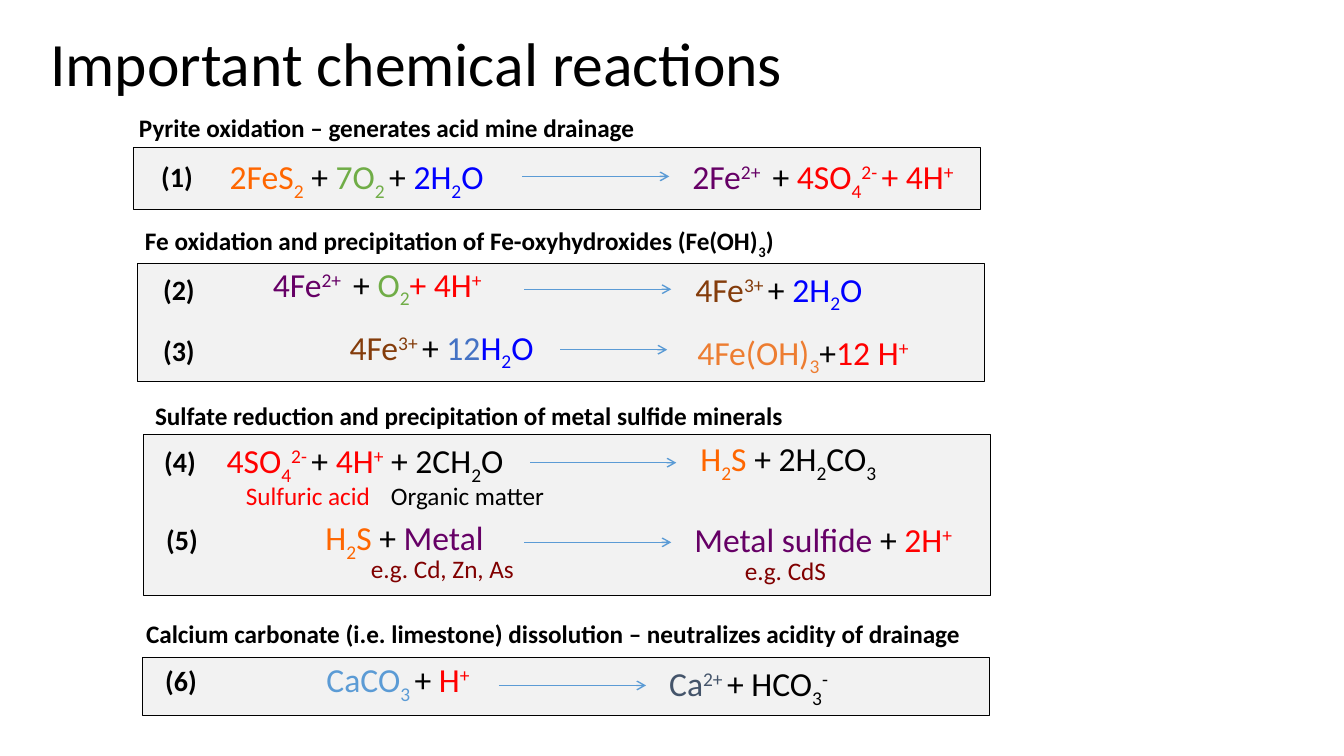
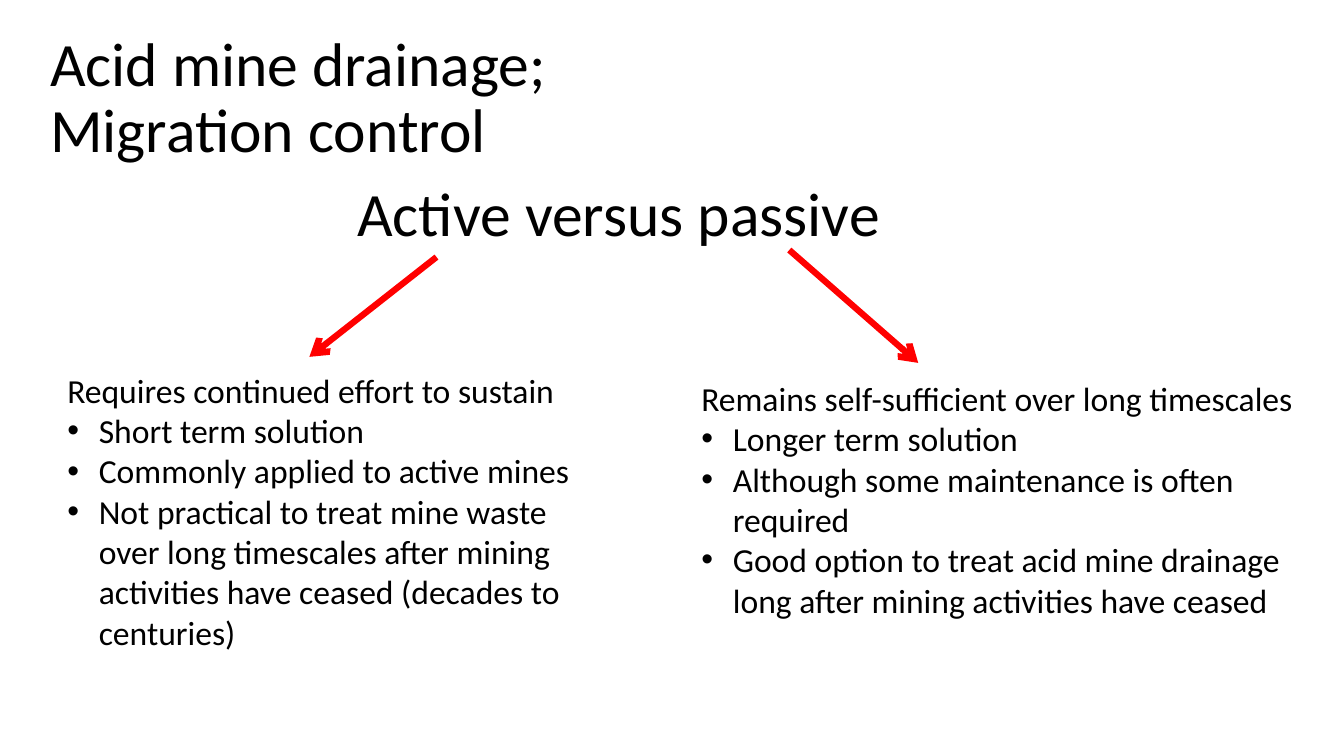
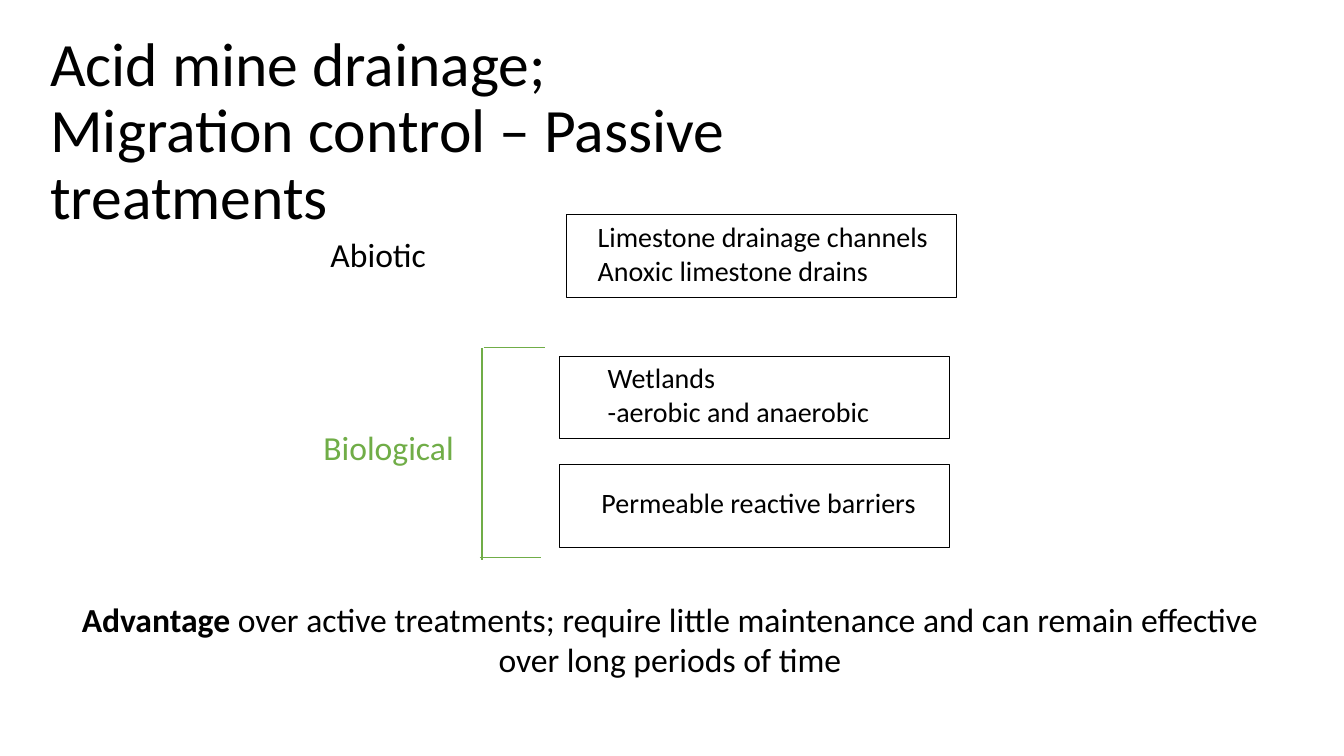
"""Build three slides on acid mine drainage: reactions, migration control and passive treatments."""
from lxml.etree import SubElement
from pptx import Presentation
from pptx.dml.color import RGBColor
from pptx.enum.shapes import MSO_CONNECTOR, MSO_SHAPE
from pptx.enum.text import MSO_ANCHOR, MSO_AUTO_SIZE, PP_ALIGN
from pptx.oxml.ns import qn
from pptx.util import Pt

BLACK = RGBColor(0x00, 0x00, 0x00)
WHITE = RGBColor(0xFF, 0xFF, 0xFF)
PANEL_GREY = RGBColor(0xF2, 0xF2, 0xF2)
ORANGE = RGBColor(0xFF, 0x66, 0x00)
RUST = RGBColor(0xED, 0x7D, 0x31)
GREEN = RGBColor(0x70, 0xAD, 0x47)
BLUE = RGBColor(0x00, 0x00, 0xFF)
MID_BLUE = RGBColor(0x44, 0x72, 0xC4)
LIGHT_BLUE = RGBColor(0x5B, 0x9B, 0xD5)
SLATE = RGBColor(0x44, 0x54, 0x6A)
PURPLE = RGBColor(0x66, 0x00, 0x66)
BROWN = RGBColor(0x84, 0x3C, 0x0B)
RED = RGBColor(0xFF, 0x00, 0x00)
MAROON = RGBColor(0x80, 0x00, 0x00)

FONT = "Calibri"
TITLE_SIZE, FORMULA_SIZE, LABEL_SIZE, NOTE_SIZE = 44, 24, 20, 18
TITLE_PLACE = (28.8, 20.2, 648, 90)
HEIGHTS = {FORMULA_SIZE: 36, LABEL_SIZE: 31.7, NOTE_SIZE: 28.8}
BASELINES = {"_": "-25000", "^": "30000"}
BULLET_INDENT = Pt(22.5)


def add_text(page, place, paragraphs, size, bold=False, wrap=False, align=PP_ALIGN.LEFT, bullets=False):
    """Write paragraphs of (colour, piece, ...) spans; a piece led by _ or ^ is set low or high."""
    is_title = size == TITLE_SIZE
    box = page.shapes.add_textbox(*map(Pt, place))
    frame_format = {
        "word_wrap": wrap,
        "auto_size": MSO_AUTO_SIZE.NONE if is_title else MSO_AUTO_SIZE.SHAPE_TO_FIT_TEXT,
        "vertical_anchor": MSO_ANCHOR.TOP,
    }
    for name, value in frame_format.items():
        setattr(box.text_frame, name, value)
    for index, spans in enumerate(paragraphs):
        para = box.text_frame.add_paragraph() if index else box.text_frame.paragraphs[0]
        para.alignment = align
        if is_title:
            para.line_spacing = 0.9
        if bullets and index:
            properties = para._p.get_or_add_pPr()
            properties.set("marL", str(BULLET_INDENT))
            properties.set("indent", str(-BULLET_INDENT))
            SubElement(properties, qn("a:buFont"), typeface="Arial")
            SubElement(properties, qn("a:buChar"), char="•")
        for colour, *pieces in spans:
            for piece in pieces:
                span = para.add_run()
                span.text = piece.lstrip("_^")
                for name, value in {"name": FONT, "size": Pt(size), "bold": bold}.items():
                    setattr(span.font, name, value)
                span.font.color.rgb = colour
                if piece[0] in BASELINES:
                    span._r.get_or_add_rPr().set("baseline", BASELINES[piece[0]])
    return box


def add_line(page, start, end, colour, width=1, arrow=True):
    """Draw a straight line, with an open arrowhead at its end if wanted."""
    line = page.shapes.add_connector(MSO_CONNECTOR.STRAIGHT, *map(Pt, (*start, *end)))
    line.line.color.rgb = colour
    line.line.width = Pt(width)
    if arrow:
        SubElement(line.line._get_or_add_ln(), qn("a:tailEnd"), type="arrow")
    SubElement(line._element.spPr, qn("a:effectLst"))


deck = Presentation()
deck.slide_width, deck.slide_height = Pt(960), Pt(540)
reactions_page, control_page, passive_page = [
    deck.slides.add_slide(deck.slide_layouts[6]) for _ in range(3)
]

reaction_panels = [
    (101.5, 469.5, 605, 41.8),
    (102.2, 310.3, 605, 115.2),
    (97.9, 187.9, 605, 84.2),
    (95, 105.1, 605, 44.6),
]
treatment_panels = [(399.6, 254.2, 278.6, 59), (399.6, 331.9, 278.6, 59), (404.6, 153.4, 278.6, 59)]
for page, panels, fill in (
    (reactions_page, reaction_panels, PANEL_GREY),
    (passive_page, treatment_panels, WHITE),
):
    for place in panels:
        panel = page.shapes.add_shape(MSO_SHAPE.RECTANGLE, *map(Pt, place))
        panel.shadow.inherit = False
        panel.fill.solid()
        panel.fill.fore_color.rgb = fill
        panel.line.color.rgb = BLACK
        panel.line.width = Pt(0.5)

titles = [
    (reactions_page, TITLE_PLACE, ["Important chemical reactions"]),
    (control_page, TITLE_PLACE, ["Acid mine drainage;", "Migration control"]),
    (passive_page, (28.8, 20.2, 697, 90), ["Acid mine drainage;", "Migration control – Passive treatments"]),
]
for page, place, lines in titles:
    add_text(page, place, [[(BLACK, text)] for text in lines], TITLE_SIZE, wrap=True)

headings = [
    (92.2, 77, 374.4, ["Pyrite oxidation – generates acid mine drainage"]),
    (96.5, 157.7, 472.3, ["Fe oxidation and precipitation of Fe-oxyhydroxides (Fe(OH)", "_3", ")"]),
    (103.7, 282.2, 465.8, ["Sulfate reduction and precipitation of metal sulfide minerals"]),
    (97.2, 437.8, 610.6, ["Calcium carbonate (i.e. limestone) dissolution – neutralizes acidity of drainage"]),
]
for left, top, width, pieces in headings:
    place = (left, top, width, HEIGHTS[NOTE_SIZE])
    add_text(reactions_page, place, [[(BLACK, *pieces)]], NOTE_SIZE, bold=True)

reactions = [
    ((108, 110.2), (373, 478.1, 126),
     (157, 108, 203.8), [(ORANGE, "2FeS", "_2"), (BLACK, " +"), (GREEN, " 7O", "_2 "), (BLACK, "+ "),
                         (BLUE, "2H", "_2", "O")],
     (487.4, 108, 210.2), [(PURPLE, "2Fe", "^2+ "), (BLACK, " + "), (RED, "4SO", "_4", "^2- ", "+ 4H", "^+")]),
    ((109.4, 190.8), (374.4, 479.5, 206.6),
     (187.9, 185, 169.9), [(PURPLE, "4Fe", "^2+ "), (BLACK, " +"), (GREEN, " O", "_2"), (RED, "+ 4H", "^+")],
     (489.6, 188.6, 139), [(BROWN, "4Fe", "^3+ "), (BLACK, "+ "), (BLUE, "2H", "_2", "O")]),
    ((109.4, 234.7), (400.3, 476.6, 249.8),
     (242.6, 229.7, 151.2), [(BROWN, "4Fe", "^3+ "), (BLACK, "+ "), (MID_BLUE, "12"), (BLUE, "H", "_2", "O")],
     (491, 233.3, 169.2), [(RUST, "4Fe(OH)", "_3"), (BLACK, "+"), (RED, "12 H", "^+")]),
    ((110.2, 313.9), (378.7, 483.1, 330.5),
     (154.8, 311, 223.9), [(RED, "4SO", "_4", "^2- "), (BLACK, "+"), (RED, " 4H", "^+"),
                           (BLACK, " + 2CH", "_2", "O")],
     (493.2, 309.6, 144.7), [(ORANGE, "H", "_2", "S"), (BLACK, " + 2H", "_2", "CO", "_3")]),
    ((111.6, 369.4), (374.4, 479.5, 387.4),
     (225.4, 365.8, 130.3), [(ORANGE, "H", "_2", "S"), (BLACK, " + "), (PURPLE, "Metal")],
     (488.9, 367.2, 206.6), [(PURPLE, "Metal sulfide"), (BLACK, " + "), (RED, "2H", "^+")]),
    ((110.9, 470.2), (356.4, 461.5, 489.6),
     (226.1, 467.3, 122.4), [(LIGHT_BLUE, "CaCO", "_3 "), (BLACK, "+ "), (RED, "H", "^+")],
     (470.9, 470.2, 133.9), [(SLATE, "Ca", "^2+ "), (BLACK, "+ HCO", "_3", "^-")]),
]
for number, (corner, (start, end, level), *sides) in enumerate(reactions, 1):
    number_place = (*corner, 37.4, HEIGHTS[LABEL_SIZE])
    add_text(reactions_page, number_place, [[(BLACK, f"({number})")]], LABEL_SIZE, bold=True)
    add_line(reactions_page, (start, level), (end, level), LIGHT_BLUE)
    for place, formula in zip(sides[::2], sides[1::2]):
        add_text(reactions_page, (*place, HEIGHTS[FORMULA_SIZE]), [formula], FORMULA_SIZE)

notes = [
    (168.5, 339.8, 104.4, RED, "Sulfuric acid"),
    (272.2, 339.8, 126.7, BLACK, "Organic matter"),
    (257.8, 391.7, 117.4, MAROON, "e.g. Cd, Zn, As"),
    (524.9, 393.1, 73.4, MAROON, "e.g. CdS"),
]
for left, top, width, colour, text in notes:
    add_text(reactions_page, (left, top, width, HEIGHTS[NOTE_SIZE]), [[(colour, text)]], NOTE_SIZE)

add_text(control_page, (123.1, 127.4, 648, 90), [[(BLACK, "Active versus passive ")]], TITLE_SIZE,
         wrap=True, align=PP_ALIGN.CENTER)
for start, end in (((311.8, 183.6), (221, 254.9)), ((563.8, 178.6), (655.9, 259.2))):
    add_line(control_page, start, end, RED, width=4.5)
approaches = [
    ((41, 260.6, 383, 211), [
        "Requires continued effort to sustain",
        "Short term solution",
        "Commonly applied to active mines",
        "Not practical to treat mine waste over long timescales after mining activities have ceased "
        "(decades to centuries)",
    ]),
    ((493.9, 266.4, 441.4, 181.4), [
        "Remains self-sufficient over long timescales",
        "Longer term solution",
        "Although some maintenance is often required",
        "Good option to treat acid mine drainage long after mining activities have ceased",
    ]),
]
for place, lines in approaches:
    add_text(control_page, place, [[(BLACK, text)] for text in lines], FORMULA_SIZE, wrap=True, bullets=True)

treatments = [
    ((419.8, 153.4, 253.4, 55.4), LABEL_SIZE, BLACK, ["Limestone drainage channels", "Anoxic limestone drains"]),
    ((427, 254.2, 203.8, 55.4), LABEL_SIZE, BLACK, ["Wetlands", "-aerobic and anaerobic"]),
    ((422.6, 343.4, 241.9, 31.7), LABEL_SIZE, BLACK, ["Permeable reactive barriers"]),
    ((229, 163.4, 83.5, 36), FORMULA_SIZE, BLACK, ["Abiotic"]),
    ((223.9, 301.7, 108.7, 36), FORMULA_SIZE, GREEN, ["Biological"]),
]
for place, size, colour, lines in treatments:
    add_text(passive_page, place, [[(colour, text)] for text in lines], size)

bracket = [
    ((344.2, 248.4), (344.2, 400.3)),
    ((342.7, 398.2), (386.6, 398.2)),
    ((345.6, 248.4), (389.5, 248.4)),
]
for start, end in bracket:
    add_line(passive_page, start, end, GREEN, arrow=False)

advantage = [
    (BLACK, "Advantage"),
    (BLACK, " over active treatments; require little maintenance and can remain effective "
            "over long periods of time"),
]
box = add_text(passive_page, (38.2, 424.1, 880.6, 65.5), [advantage], FORMULA_SIZE,
               wrap=True, align=PP_ALIGN.CENTER)
box.text_frame.paragraphs[0].runs[0].font.bold = True

deck.save("out.pptx")
